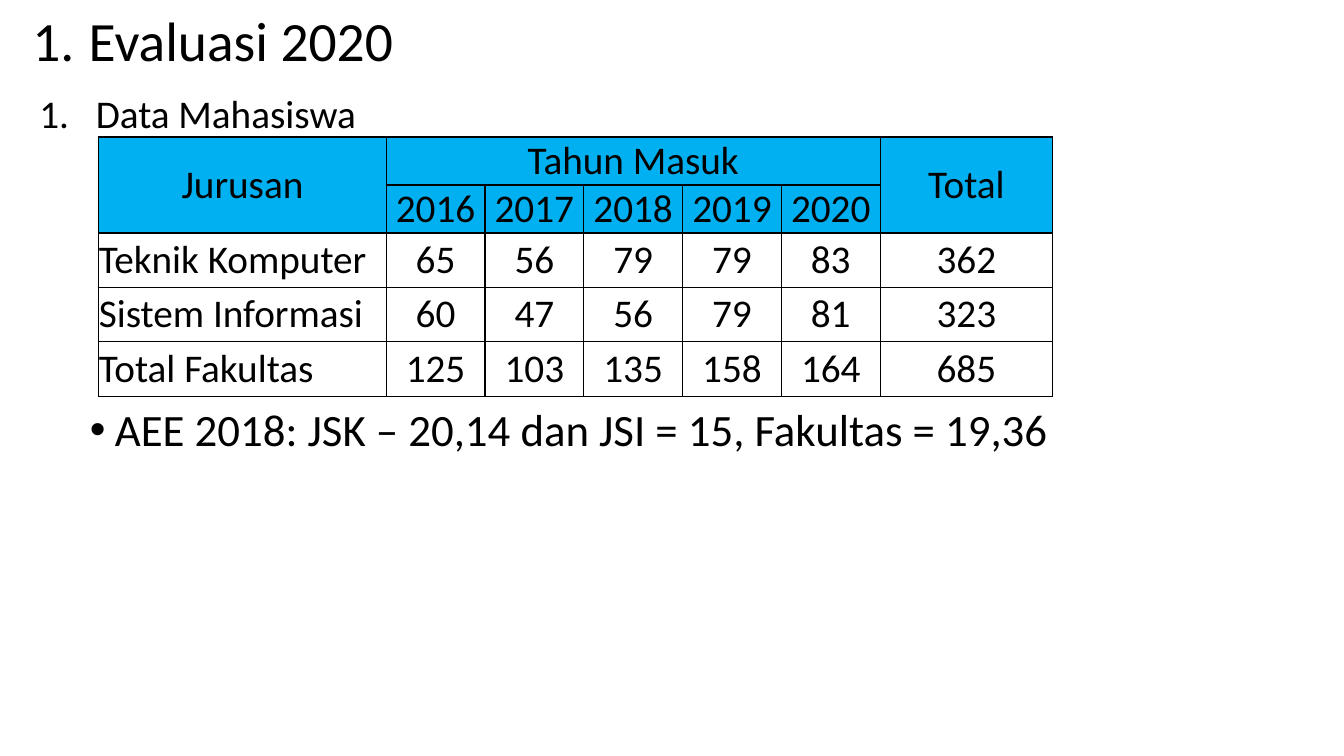
from lxml.etree import SubElement
from pptx import Presentation
from pptx.dml.color import RGBColor
from pptx.enum.text import MSO_ANCHOR, MSO_AUTO_SIZE, PP_ALIGN
from pptx.oxml.ns import qn
from pptx.util import Inches, Pt

BLACK = RGBColor(0x00, 0x00, 0x00)
HEADER_BLUE = RGBColor(0x00, 0xB0, 0xF0)
FONT = "Calibri"

HEADER_ROWS = 2
ROWS = [
    ["Jurusan", "Tahun Masuk", "", "", "", "", "Total"],
    ["", "2016", "2017", "2018", "2019", "2020", ""],
    ["Teknik Komputer", "65", "56", "79", "79", "83", "362"],
    ["Sistem Informasi", "60", "47", "56", "79", "81", "323"],
    ["Total Fakultas", "125", "103", "135", "158", "164", "685"],
]
MERGES = [((0, 0), (1, 0)), ((0, 1), (0, 5)), ((0, 6), (1, 6))]
COLUMN_WIDTHS = [2.85] + [0.98] * 5 + [1.71]
ROW_HEIGHTS = [0.37] * HEADER_ROWS + [0.54] * 3


def set_font(paragraph, size):
    paragraph.font.name = FONT
    paragraph.font.size = Pt(size)
    paragraph.font.color.rgb = BLACK


def place(shape, left, top, width, height, anchor):
    shape.left, shape.top = Inches(left), Inches(top)
    shape.width, shape.height = Inches(width), Inches(height)
    frame = shape.text_frame
    frame.word_wrap = True
    frame.auto_size = MSO_AUTO_SIZE.NONE
    frame.vertical_anchor = anchor
    return frame


def write_item(paragraph, text, size, margin, hanging, space_before=0, bullet=None):
    paragraph.text = text
    paragraph.alignment = PP_ALIGN.LEFT
    paragraph.line_spacing = 0.9
    paragraph.space_before = Pt(space_before)
    properties = paragraph._p.get_or_add_pPr()
    properties.set("marL", str(Inches(margin)))
    properties.set("indent", str(-Inches(hanging)))
    if bullet:
        SubElement(properties, qn("a:buFont"), typeface="Arial")
        SubElement(properties, qn("a:buChar"), char=bullet)
    else:
        SubElement(properties, qn("a:buFont"), typeface="+mj-lt")
        SubElement(properties, qn("a:buAutoNum"), type="arabicPeriod")
    set_font(paragraph, size)


def add_borders(cell):
    properties = cell._tc.get_or_add_tcPr()
    for side in ("a:lnL", "a:lnR", "a:lnT", "a:lnB"):
        line = SubElement(properties, qn(side), w=str(Pt(1)))
        fill = SubElement(line, qn("a:solidFill"))
        SubElement(fill, qn("a:srgbClr"), val=str(BLACK))


def format_cell(cell, text, is_header, is_label):
    cell.margin_left = cell.margin_right = cell.margin_top = cell.margin_bottom = 0
    cell.vertical_anchor = MSO_ANCHOR.MIDDLE
    add_borders(cell)
    if is_header:
        cell.fill.solid()
        cell.fill.fore_color.rgb = HEADER_BLUE
    else:
        cell.fill.background()
    cell.text = text
    paragraph = cell.text_frame.paragraphs[0]
    paragraph.alignment = PP_ALIGN.LEFT if is_label else PP_ALIGN.CENTER
    set_font(paragraph, 28)


def add_student_table(slide):
    table = slide.shapes.add_table(
        len(ROWS), len(COLUMN_WIDTHS), Inches(0.98), Inches(1.36),
        Inches(sum(COLUMN_WIDTHS)), Inches(sum(ROW_HEIGHTS)),
    ).table
    table.first_row = table.horz_banding = False
    for column, width in zip(table.columns, COLUMN_WIDTHS):
        column.width = Inches(width)
    for row, height in zip(table.rows, ROW_HEIGHTS):
        row.height = Inches(height)
    for row_index, texts in enumerate(ROWS):
        is_header = row_index < HEADER_ROWS
        for column_index, text in enumerate(texts):
            is_label = column_index == 0 and not is_header
            format_cell(table.cell(row_index, column_index), text, is_header, is_label)
    for first, last in MERGES:
        table.cell(*first).merge(table.cell(*last))
    table.cell(0, 1).vertical_anchor = MSO_ANCHOR.BOTTOM


def main():
    presentation = Presentation()
    presentation.slide_width, presentation.slide_height = Inches(13.33), Inches(7.5)
    slide = presentation.slides.add_slide(presentation.slide_layouts[1])

    title = place(slide.shapes.title, 0.22, 0.09, 12.65, 0.68, MSO_ANCHOR.MIDDLE)
    write_item(title.paragraphs[0], "Evaluasi 2020", 39.6, 0.56, 0.56)

    body = place(slide.placeholders[1], 0.29, 0.89, 12.65, 6.42, MSO_ANCHOR.TOP)
    write_item(body.paragraphs[0], "Data Mahasiswa", 28, 0.56, 0.56)
    summary = body.add_paragraph()
    summary.level = 1
    write_item(summary, "AEE 2018: JSK – 20,14 dan JSI = 15, Fakultas = 19,36",
               32, 0.75, 0.25, space_before=193, bullet="•")

    add_student_table(slide)
    presentation.save("out.pptx")


if __name__ == "__main__":
    main()
